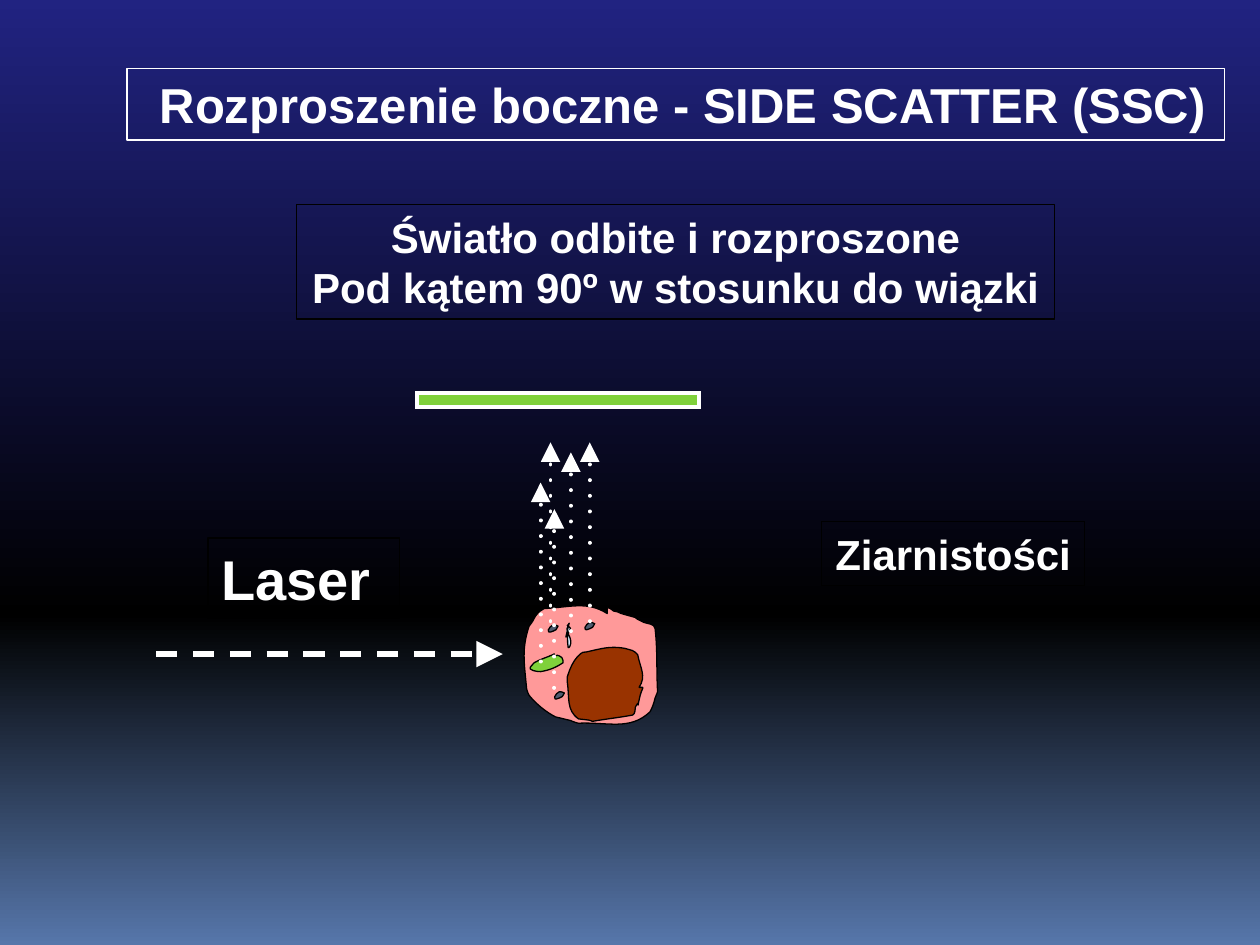
import math
from copy import deepcopy
from dataclasses import dataclass

from lxml import etree
from pptx import Presentation
from pptx import util as u
from pptx.dml import color as c
from pptx.enum import shapes as s, text as t
from pptx.oxml import ns

Point = tuple[float, float]

WHITE = c.RGBColor(0xFF, 0xFF, 0xFF)
BLACK = c.RGBColor(0x00, 0x00, 0x00)
NAVY = c.RGBColor(0x21, 0x23, 0x81)
STEEL = c.RGBColor(0x56, 0x76, 0xAA)
PINK = c.RGBColor(0xFF, 0x99, 0x99)
BROWN = c.RGBColor(0x99, 0x33, 0x00)
SLATE = c.RGBColor(0x4E, 0x5B, 0x6F)
GREEN = c.RGBColor(0x7F, 0xD1, 0x3B)
PALE_BLUE = c.RGBColor(0xD6, 0xEC, 0xFF)

SCATTER_LENGTH = 102.2


@dataclass(frozen=True)
class Label:
    lines: tuple[str, ...]
    left: float
    top: float
    width: float
    height: float
    size: float
    border: c.RGBColor = BLACK


@dataclass(frozen=True)
class Arrow:
    start: Point
    end: Point
    weight: float
    dash: str
    cap: str


@dataclass(frozen=True)
class Blob:
    fill: c.RGBColor
    points: tuple[Point, ...]
    origin: Point = (0, 0)
    closed: bool = True
    rotation: float = 0
    pivot: Point = (0, 0)


LABELS = (
    Label(("Laser ",), 118.8, 307.4, 109.4, 46.1, 32),
    Label(("Ziarnistości",), 469.4, 298.1, 150.5, 36.7, 24),
    Label((" Rozproszenie boczne - SIDE SCATTER (SSC)",),
          72.6, 39, 627.1, 41, 28, WHITE),
    Label(("Światło odbite i rozproszone", "Pod kątem 90º w stosunku do wiązki"),
          169.4, 116.8, 433.4, 65.5, 24),
)

CELL = (
    (347, 350.6), (335.5, 343.4), (326.2, 347), (311, 347.8),
    (304.6, 351.4), (306.7, 352.8), (302.4, 357.8),
    (298.1, 370.8), (299.5, 378), (301, 393.8),
    (301.7, 395.3), (301.7, 396.7), (302.4, 397.4),
    (306.7, 402.5), (311.8, 406.8), (317.5, 409.7),
    (320.4, 410.4), (323.3, 411.1), (326.2, 411.8),
    (327.6, 412.6), (330.5, 413.3), (330.5, 413.3),
    (347.8, 412.6), (360, 417.6), (371.5, 406.8),
    (373, 403.9), (373.7, 401.8), (374.4, 398.9),
    (375.1, 397.4), (375.8, 395.3), (375.8, 395.3),
    (375.1, 383), (375.8, 371.5), (374.4, 359.3),
    (374.4, 356.4), (369.4, 356.4), (367.9, 355.7),
    (354.2, 349.2), (377.3, 357.1), (355, 350.6),
    (353.5, 349.9), (352.1, 349.2), (350.6, 349.2),
    (349.9, 348.5), (347, 346.3), (347, 347.8),
    (347, 348.5), (347, 349.2), (347, 350.6),
)
NUCLEUS = (
    (365.8, 392.4), (370.1, 385.9), (366.5, 381.6), (365, 373.7),
    (362.2, 370.8), (362.2, 371.5), (357.8, 370.1),
    (349.2, 368.6), (344.9, 370.1), (335.5, 372.2),
    (334.1, 372.2), (333.4, 372.2), (332.6, 373),
    (329.8, 375.1), (327.6, 378.7), (326.2, 382.3),
    (325.4, 383.8), (325.4, 385.2), (324.7, 386.6),
    (324.7, 387.4), (324.7, 388.8), (324.7, 388.8),
    (326.2, 398.2), (324, 405.4), (331.2, 410.4),
    (333.4, 410.4), (334.8, 411.1), (337, 411.1),
    (337.7, 411.1), (339.1, 411.8), (339.1, 411.8),
    (347, 410.4), (354.2, 409.7), (362.2, 408.2),
    (363.6, 407.5), (363.6, 404.6), (363.6, 403.9),
    (367.2, 396.7), (363.6, 409), (366.5, 396.7),
    (366.5, 396), (367.2, 395.3), (367.2, 394.6),
    (367.2, 393.8), (368.6, 392.4), (367.9, 392.4),
    (367.2, 392.4), (366.5, 392.4), (365.8, 392.4),
)
GRANULE = (
    (7.9, 1.4), (7.2, 1.4), (5.8, 0), (5, 0.7),
    (2.9, 1.4), (0, 6.5), (5, 4.3),
    (6.5, 4.3), (7.2, 2.9), (7.9, 1.4),
)
ORGANELLE = (
    (316.8, 373.7), (312.5, 375.8), (308.9, 376.6), (305.3, 378.7),
    (304.6, 380.2), (302.4, 380.9), (303.1, 382.3),
    (304.6, 383.8), (308.9, 383.8), (308.9, 383.8),
    (313.9, 383), (317.5, 381.6), (321.8, 378.7),
    (321.8, 378), (321.8, 376.6), (321.1, 375.8),
    (316.8, 372.2), (316.8, 377.3), (316.8, 373.7),
)
FIBRE = (
    (323.3, 364.3), (325.4, 355), (326.2, 353.5), (324, 359.3),
    (324.7, 362.9), (324, 366.5), (324.7, 370.1),
    (325.4, 370.8), (326.2, 367.9), (326.2, 367.2),
    (326.2, 365), (325.4, 363.6), (324.7, 362.2),
    (326.2, 357.8), (326.9, 360), (324, 357.1),
)
GRANULE_ORIGINS = ((311, 356.4), (331.9, 355), (314.6, 394.6))
BLOBS = (
    Blob(PINK, CELL),
    Blob(BROWN, NUCLEUS, rotation=82.9, pivot=(346.3, 390.6)),
    *(Blob(SLATE, GRANULE, origin) for origin in GRANULE_ORIGINS),
    Blob(GREEN, ORGANELLE),
    Blob(PALE_BLUE, FIBRE, closed=False),
)

LASER_BEAM = Arrow((89.3, 373.8), (287.3, 373.8), 3, "dash", "flat")
SCATTER_STARTS = ((337, 355), (316.8, 393.1), (326.2, 360.7),
                  (308.9, 378), (314.6, 355))


def paint_background(page) -> None:
    fill = page.background.fill
    fill.gradient()
    fill.gradient_angle = 270
    stops = page.element.find(".//" + ns.qn("a:gsLst"))
    stops.insert(1, deepcopy(stops[1]))
    colours = ((0, NAVY), (0.65, BLACK), (1, STEEL))
    for stop, (position, colour) in zip(fill.gradient_stops, colours):
        stop.position = position
        stop.color.rgb = colour


def set_outline(shape, colour: c.RGBColor, weight: float) -> None:
    shape.shadow.inherit = False
    shape.line.color.rgb = colour
    shape.line.width = u.Pt(weight)


def add_rectangle(page, left: float, top: float, width: float, height: float):
    return page.shapes.add_shape(
        s.MSO_SHAPE.RECTANGLE, u.Pt(left), u.Pt(top), u.Pt(width), u.Pt(height))


def draw_label(page, label: Label) -> None:
    box = add_rectangle(page, label.left, label.top, label.width, label.height)
    box.fill.background()
    set_outline(box, label.border, 0.75)
    frame = box.text_frame
    frame.word_wrap = False
    frame.auto_size = t.MSO_AUTO_SIZE.SHAPE_TO_FIT_TEXT
    frame.vertical_anchor = t.MSO_ANCHOR.MIDDLE
    frame.text = "\n".join(label.lines)
    for para in frame.paragraphs:
        para.alignment = t.PP_ALIGN.CENTER
        para.font.name = "Arial"
        para.font.size = u.Pt(label.size)
        para.font.bold = True
        para.font.color.rgb = WHITE


def draw_arrow(page, arrow: Arrow) -> None:
    ends = (u.Pt(value) for value in arrow.start + arrow.end)
    connector = page.shapes.add_connector(s.MSO_CONNECTOR.STRAIGHT, *ends)
    connector.line.color.rgb = WHITE
    connector.line.width = u.Pt(arrow.weight)
    properties = connector.element.spPr
    outline = properties.find(ns.qn("a:ln"))
    outline.set("cap", arrow.cap)
    etree.SubElement(outline, ns.qn("a:prstDash"), val=arrow.dash)
    etree.SubElement(outline, ns.qn("a:tailEnd"), type="triangle", w="lg", len="lg")
    etree.SubElement(properties, ns.qn("a:effectLst"))


def place_points(blob: Blob) -> list[Point]:
    turn = math.radians(-blob.rotation)
    (left, top), (pivot_x, pivot_y) = blob.origin, blob.pivot
    placed = []
    for x, y in blob.points:
        across, down = x - pivot_x, y - pivot_y
        placed.append((
            u.Pt(left + pivot_x + across * math.cos(turn) - down * math.sin(turn)),
            u.Pt(top + pivot_y + across * math.sin(turn) + down * math.cos(turn))))
    return placed


def curve_segments(shape) -> None:
    segments = list(shape.element.iter(ns.qn("a:lnTo")))
    for first in range(0, len(segments) - 2, 3):
        triple = segments[first:first + 3]
        curve = etree.Element(ns.qn("a:cubicBezTo"))
        triple[0].addprevious(curve)
        for segment in triple:
            curve.append(segment[0])
            segment.getparent().remove(segment)


def draw_blob(page, blob: Blob) -> None:
    start, *rest = place_points(blob)
    builder = page.shapes.build_freeform(*start)
    builder.add_line_segments(rest, close=blob.closed)
    shape = builder.convert_to_shape()
    curve_segments(shape)
    shape.rotation = blob.rotation
    shape.fill.solid()
    shape.fill.fore_color.rgb = blob.fill
    set_outline(shape, BLACK, 0.75)


def draw_detector(page) -> None:
    detector = add_rectangle(page, 314.9, 147.8, 7.9, 161.3)
    detector.rotation = 270
    detector.fill.solid()
    detector.fill.fore_color.rgb = GREEN
    set_outline(detector, WHITE, 2.25)
    outline = detector.element.spPr.find(ns.qn("a:ln"))
    etree.SubElement(outline, ns.qn("a:miter"), lim="800000")


def main() -> None:
    deck = Presentation()
    deck.slide_width, deck.slide_height = u.Pt(720), u.Pt(540)
    page = deck.slides.add_slide(deck.slide_layouts[6])
    paint_background(page)
    for label in LABELS:
        draw_label(page, label)
    draw_arrow(page, LASER_BEAM)
    for blob in BLOBS:
        draw_blob(page, blob)
    for x, y in SCATTER_STARTS:
        draw_arrow(page, Arrow((x, y), (x, y - SCATTER_LENGTH), 2.25, "dot", "rnd"))
    draw_detector(page)
    deck.save("out.pptx")


if __name__ == "__main__":
    main()
